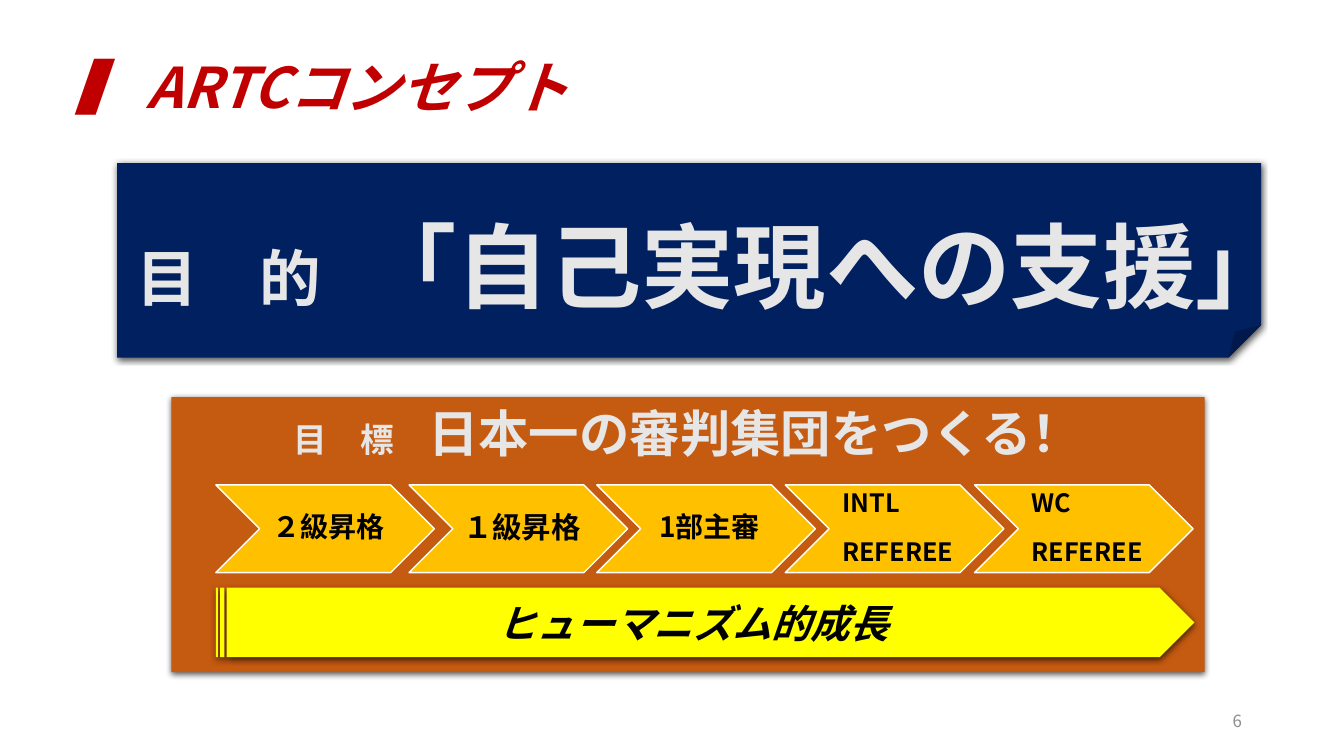
from lxml import etree
from pptx import Presentation
from pptx.dml.color import RGBColor
from pptx.enum.shapes import MSO_SHAPE
from pptx.enum.text import MSO_ANCHOR, PP_ALIGN
from pptx.oxml.ns import qn
from pptx.util import Cm, Pt

LEFT, CENTER, RIGHT = PP_ALIGN.LEFT, PP_ALIGN.CENTER, PP_ALIGN.RIGHT
TOP, MIDDLE, BOTTOM = MSO_ANCHOR.TOP, MSO_ANCHOR.MIDDLE, MSO_ANCHOR.BOTTOM
JAPANESE = "Noto Sans CJK JP"
COLORS = {
    "title": "C00000", "navy": "002060", "orange": "C55A11", "amber": "FFC000",
    "yellow": "FFFF00", "pale": "E7E6E6", "black": "000000", "white": "FFFFFF",
    "number": "8C8C8C",
}


def write(paragraph, text, size, color, font=JAPANESE, bold=True, italic=False,
          align=CENTER, spacing=None):
    """Add one formatted run to a paragraph."""
    paragraph.alignment = align
    if spacing:
        paragraph.line_spacing = spacing
    run = paragraph.add_run()
    run.text = text
    run.font.size = Pt(size)
    run.font.name = font
    run.font.bold = bold
    run.font.italic = italic
    run.font.color.rgb = RGBColor.from_string(COLORS[color])
    east_asian = etree.Element(qn("a:ea"), typeface=JAPANESE)
    run.font._element.find(qn("a:latin")).addnext(east_asian)


def add_panel(preset, left, top, width, height, fill, anchor=MIDDLE, shadow=True):
    """Add a filled shape without outline, with a soft shadow below if wanted."""
    shape = slide.shapes.add_shape(preset, Cm(left), Cm(top), Cm(width), Cm(height))
    shape.shadow.inherit = False
    shape.fill.solid()
    shape.fill.fore_color.rgb = RGBColor.from_string(COLORS[fill])
    shape.line.fill.background()
    shape.text_frame.word_wrap = True
    shape.text_frame.vertical_anchor = anchor
    if shadow:
        effects = shape._element.spPr.find(qn("a:effectLst"))
        outer = etree.SubElement(effects, qn("a:outerShdw"), blurRad=str(Pt(4.5)),
                                 dist=str(Pt(1.5)), dir="5400000", rotWithShape="0")
        tint = etree.SubElement(outer, qn("a:srgbClr"), val=COLORS["black"])
        etree.SubElement(tint, qn("a:alpha"), val="63000")
    return shape


presentation = Presentation()
presentation.slide_width, presentation.slide_height = Cm(33.87), Cm(19.05)
slide = presentation.slides.add_slide(presentation.slide_layouts[5])

# Title
title = slide.shapes.title
title.left, title.top, title.width, title.height = Cm(1.7), Cm(0.53), Cm(29.21), Cm(3.51)
title.text_frame.vertical_anchor = MIDDLE
write(title.text_frame.paragraphs[0], "▍ ARTCコンセプト", 40, "title",
      italic=True, align=LEFT, spacing=0.9)

# Purpose
purpose = add_panel(MSO_SHAPE.FOLDED_CORNER, 2.95, 4.11, 28.83, 4.9, "navy", BOTTOM)
for text, size in (("目　的", 44), ("　", 64), ("｢自己実現への支援｣", 66)):
    write(purpose.text_frame.paragraphs[0], text, size, "pale", font="Calibri")

# Goal
goal = add_panel(MSO_SHAPE.RECTANGLE, 4.32, 10.01, 26.04, 6.93, "orange", TOP)
for text, size in (("目　標　", 24), ("日本一の審判集団をつくる！", 36)):
    write(goal.text_frame.paragraphs[0], text, size, "pale", font="Noto Sans Mono")

# Steps: left edge, lines of text, size
steps = (
    (5.44, ("２級昇格",), 20),
    (10.31, ("１級昇格",), 21),
    (15.04, ("1部主審",), 20),
    (19.79, ("INTL", "REFEREE"), 18),
    (24.56, ("WC", "REFEREE"), 18),
)
for left, lines, size in steps:
    step = add_panel(MSO_SHAPE.CHEVRON, left, 12.22, 5.51, 2.21, "amber", shadow=False)
    step.line.color.rgb = RGBColor.from_string(COLORS["white"])
    step.line.width = Pt(1)
    frame = step.text_frame
    frame.margin_left = Cm(0.23 if len(lines) == 1 else 0.33)
    frame.margin_right = frame.margin_top = frame.margin_bottom = Cm(0.05)
    for index, line in enumerate(lines):
        paragraph = frame.add_paragraph() if index else frame.paragraphs[0]
        paragraph.space_before = Pt(15 * index)
        write(paragraph, line, size, "black", spacing=0.9,
              align=CENTER if len(lines) == 1 else LEFT)

# Growth arrow
growth = add_panel(MSO_SHAPE.STRIPED_RIGHT_ARROW, 5.44, 14.81, 24.66, 1.75, "yellow")
growth.adjustments[0], growth.adjustments[1] = 1.0, 0.5
write(growth.text_frame.paragraphs[0], "ヒューマニズム的成長", 28, "black", italic=True)

# Page number
number = slide.shapes.add_textbox(Cm(23.93), Cm(17.65), Cm(7.62), Cm(1.02))
number.text_frame.word_wrap = True
number.text_frame.vertical_anchor = MIDDLE
write(number.text_frame.paragraphs[0], "6", 12, "number", bold=False, align=RIGHT)

presentation.save("out.pptx")
